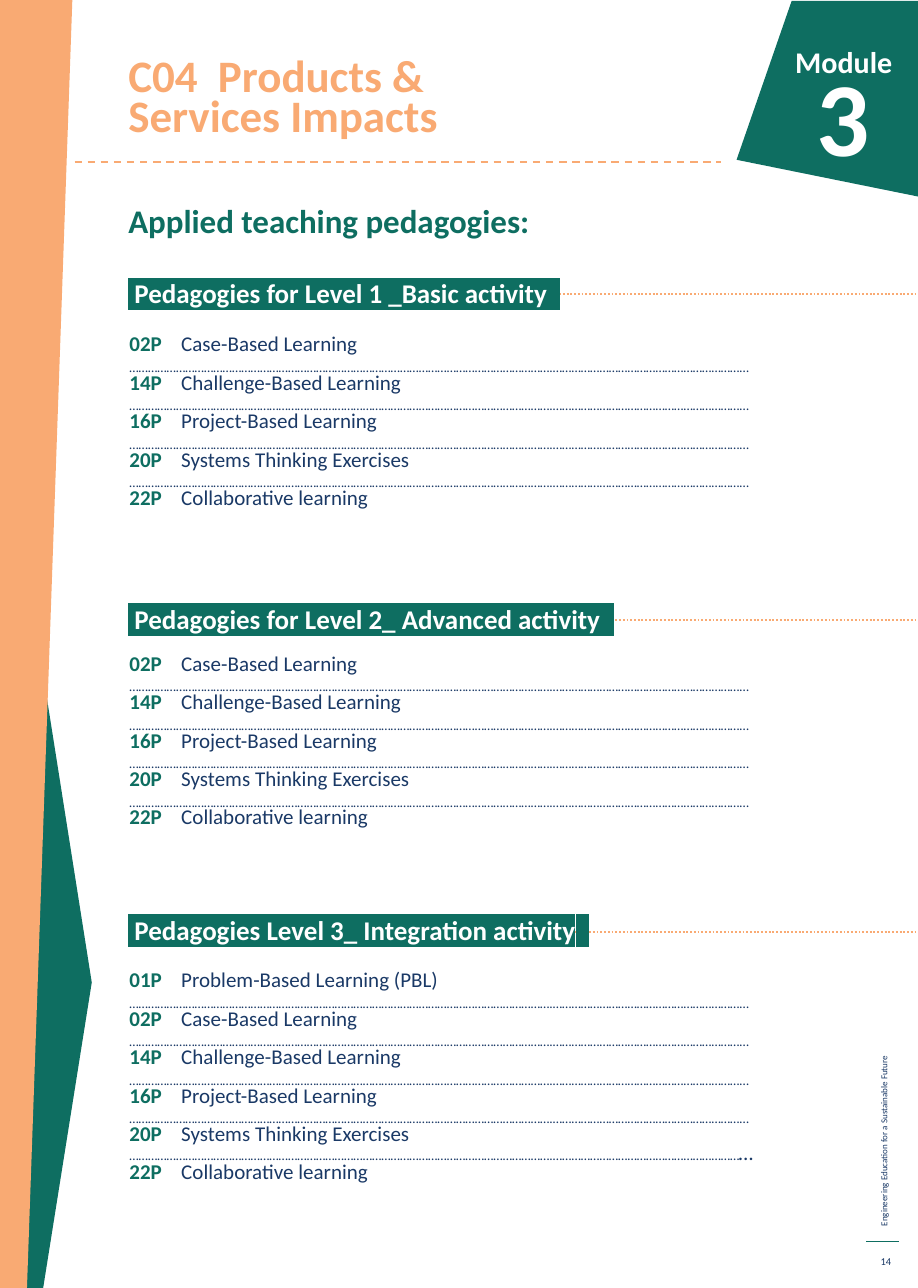
from dataclasses import dataclass

from lxml.etree import SubElement
from pptx import Presentation
from pptx.dml.color import RGBColor as RGB
from pptx.enum.dml import MSO_LINE as Dash
from pptx.enum.shapes import MSO_CONNECTOR as Connector
from pptx.enum.text import MSO_ANCHOR as Anchor, PP_ALIGN as Align
from pptx.oxml.ns import qn
from pptx.util import Inches, Pt

WIDTH, HEIGHT = Inches(8.5), Inches(11.93)


@dataclass(frozen=True)
class Theme:
    font: str = "Calibri"
    green: str = "0E6E61"
    orange: str = "F9AA73"
    navy: str = "1A3966"
    white: str = "FFFFFF"
    title: int = 30
    heading: int = 22
    band: int = 18
    item: int = 14
    dots: int = 9
    module: int = 20
    number: int = 70
    page: int = 7
    motto: int = 6
    leading: float = 12.8


THEME = Theme()
MARGIN = 12.82  # left edge of the text column, in percent of the width
DOTS = "……………………………………………………………………………………………………………………….………………………………………………………"

CASE = ("02P", "Case-Based Learning")
COMMON = [
    ("14P", "Challenge-Based Learning"),
    ("16P", "Project-Based Learning"),
    ("20P", "Systems Thinking Exercises"),
    ("22P", "Collaborative learning"),
]
# Heading, tops of rule, band and list in percent of the height, items
LEVELS = [
    ("Pedagogies for Level 1 _Basic activity", 22.8, 22.05, 25.73, [CASE, *COMMON]),
    ("Pedagogies for Level 2_ Advanced activity", 48.11, 47.36, 50.54, [CASE, *COMMON]),
    ("Pedagogies Level 3_ Integration activity", 72.34, 71.5, 75.11,
     [("01P", "Problem-Based Learning (PBL)"), CASE, *COMMON]),
]


def across(percent):
    return round(WIDTH * percent / 100)


def down(percent):
    return round(HEIGHT * percent / 100)


def style(font, size, color, bold=False):
    font.name, font.size, font.bold = THEME.font, Pt(size), bold
    font.color.rgb = RGB.from_string(color)


def add_box(slide, left, top, width, height):
    box = slide.shapes.add_textbox(across(left), down(top), across(width), down(height))
    box.text_frame.word_wrap = True
    return box


def add_label(slide, area, text, size, color, bold=True, align=Align.LEFT,
              anchor=Anchor.TOP, before=0, leading=None):
    label = add_box(slide, *area)
    label.text_frame.vertical_anchor = anchor
    line = label.text_frame.paragraphs[0]
    line.text, line.alignment = text, align
    line.space_before = Pt(before)
    line.line_spacing = leading
    style(line.font, size, color, bold)
    return label


def add_rule(slide, start, end, y, color, weight, dash=None):
    rule = slide.shapes.add_connector(
        Connector.STRAIGHT, across(start), down(y), across(end), down(y))
    rule.line.color.rgb = RGB.from_string(color)
    rule.line.width = Pt(weight)
    if dash:
        rule.line.dash_style = dash
    SubElement(rule._element.spPr, qn("a:effectLst"))


def add_outline(slide, corners, color):
    first, *rest = [(across(x), down(y)) for x, y in corners]
    builder = slide.shapes.build_freeform(*first)
    builder.add_line_segments(rest, close=True)
    outline = builder.convert_to_shape()
    outline.shadow.inherit = False
    outline.fill.solid()
    outline.fill.fore_color.rgb = RGB.from_string(color)
    outline.line.fill.background()


def highlight(run, color):
    props = run.font._element
    mark = SubElement(props, qn("a:highlight"))
    SubElement(mark, qn("a:srgbClr"), val=color)
    props.find(qn("a:solidFill")).addnext(mark)


def add_band(slide, top, heading):
    line = add_box(slide, MARGIN, top, 78.82, 2.77).text_frame.paragraphs[0]
    line.alignment = Align.JUSTIFY
    line.line_spacing = Pt(THEME.leading)
    for text, color in ((f" {heading}", THEME.white), (". ", THEME.green)):
        run = line.add_run()
        run.text = text
        style(run.font, THEME.band, color, True)
        highlight(run, THEME.green)


def add_row(frame, first, *parts):
    """One list line; each part is text, size, color, bold."""
    row = frame.paragraphs[0] if first else frame.add_paragraph()
    row.line_spacing = Pt(THEME.leading)
    props = row._p.get_or_add_pPr()
    props.set("marL", str(Inches(0.49)))
    props.set("indent", str(Inches(-0.48)))
    tabs = SubElement(props, qn("a:tabLst"))
    for stop in (0.47, 1.75):
        SubElement(tabs, qn("a:tab"), pos=str(Inches(stop)), algn="l")
    for text, *look in parts:
        run = row.add_run()
        run.text = text
        style(run.font, *look)


def add_list(slide, top, items, wide_end):
    frame = add_box(slide, MARGIN, top, 78.12, 17.35).text_frame
    for index, (code, name) in enumerate(items):
        if index:
            leader = [(DOTS, THEME.dots, THEME.navy, False)]
            if wide_end and index == len(items) - 1:
                leader = [(DOTS[:-1], THEME.dots, THEME.navy, False),
                          ("…", THEME.item, THEME.navy, False)]
            add_row(frame, False, *leader)
        add_row(frame, index == 0, (f"{code} \t", THEME.item, THEME.green, True),
                (name, THEME.item, THEME.navy, False))


def add_margin_art(slide):
    motto = add_label(slide, (69.88, 76.36, 52.82, 1.68),
                      "Engineering Education for a Sustainable Future",
                      THEME.motto, THEME.navy, bold=False)
    motto.rotation = 270
    add_rule(slide, 94.35, 97.88, 96.4, THEME.green, 0.75)
    add_label(slide, (94.35, 96.73, 3.88, 2.43), "14", THEME.page, THEME.navy,
              bold=False, align=Align.RIGHT, anchor=Anchor.MIDDLE)
    add_outline(slide, [(4.71, 100), (2.71, 100), (2.71, 43.34),
                        (9.76, 75.19), (10, 76.28)], THEME.green)
    add_outline(slide, [(0, 0), (7.88, 0), (2.94, 100), (0, 100)], THEME.orange)


def add_header(slide):
    add_outline(slide, [(100, 0.08), (86.24, 0.08), (80.24, 12.41), (100, 15.26)],
                THEME.green)
    for text, left, top, size in (("Module", 77.18, 2.93, THEME.module),
                                  ("3", 74.71, 3.6, THEME.number)):
        add_label(slide, (left, top, 21.18, 11.9), text, size, THEME.white,
                  align=Align.RIGHT, before=22.7)
    add_rule(slide, 8.12, 78.59, 12.57, THEME.orange, 1.25, Dash.DASH)
    add_label(slide, (MARGIN, 0, 65.65, 11.4), "C04  Products &\vServices Impacts",
              THEME.title, THEME.orange, anchor=Anchor.BOTTOM, leading=Pt(26.8))


def main():
    deck = Presentation()
    deck.slide_width, deck.slide_height = WIDTH, HEIGHT
    slide = deck.slides.add_slide(deck.slide_layouts[6])

    # Page frame
    add_margin_art(slide)

    # Levels with their pedagogies
    add_label(slide, (MARGIN, 15.51, 65.18, 8.8), "Applied teaching pedagogies:",
              THEME.heading, THEME.green, before=8.5, leading=0.9)
    for heading, rule_top, band_top, list_top, items in LEVELS:
        add_rule(slide, 29.53, 100, rule_top, THEME.orange, 1.25, Dash.ROUND_DOT)
        add_band(slide, band_top, heading)
        add_list(slide, list_top, items, wide_end=heading == LEVELS[-1][0])

    # Title and module badge
    add_header(slide)
    deck.save("out.pptx")


if __name__ == "__main__":
    main()
